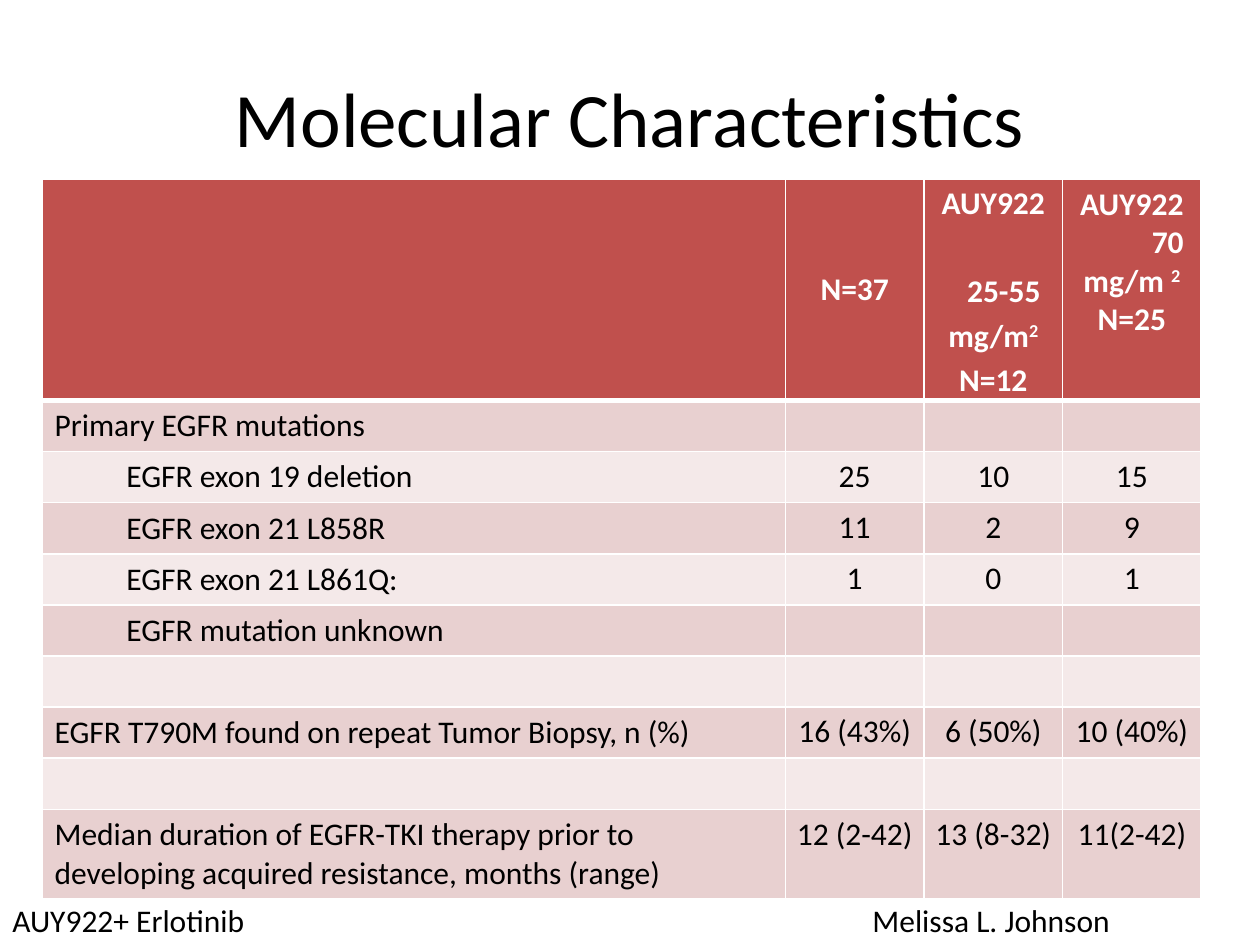
import pptx
import pptx.dml.color
import pptx.enum.text
import pptx.oxml
import pptx.oxml.ns
import pptx.util

Pt = pptx.util.Pt
RGBColor = pptx.dml.color.RGBColor
ALIGN = pptx.enum.text.PP_ALIGN
ANCHOR = pptx.enum.text.MSO_ANCHOR

COLORS = {"header": "C0504D", "odd": "E8D0D0", "even": "F4E9E9",
          "line": "FFFFFF", "light": "FFFFFF", "dark": "000000"}
NAMESPACE = pptx.oxml.ns.nsdecls("a")


def write(paragraph, text, size=18, color="dark", bold=False, indent=0, **formats):
    """Fill a paragraph; text after a caret is superscript."""
    if indent:
        paragraph._p.get_or_add_pPr().set("marL", str(Pt(indent)))
    for name, value in formats.items():
        setattr(paragraph, name, value)
    for position, part in enumerate(text.split("^")):
        run = paragraph.add_run()
        run.text = part
        for name, value in {"name": "Calibri", "size": Pt(size), "bold": bold}.items():
            setattr(run.font, name, value)
        run.font.color.rgb = RGBColor.from_string(COLORS[color])
        if position:
            run._r.get_or_add_rPr().set("baseline", "30000")


def style_cell(cell, fill, top=1, bottom=1):
    """Set the borders and then the fill of a table cell."""
    properties = cell._tc.get_or_add_tcPr()
    for side, width in {"L": 1, "R": 1, "T": top, "B": bottom}.items():
        properties.append(pptx.oxml.parse_xml(
            f'<a:ln{side} {NAMESPACE} w="{Pt(width)}"><a:solidFill>'
            f'<a:srgbClr val="{COLORS["line"]}"/></a:solidFill></a:ln{side}>'))
    cell.fill.solid()
    cell.fill.fore_color.rgb = RGBColor.from_string(COLORS[fill])


presentation = pptx.Presentation()
presentation.slide_width, presentation.slide_height = Pt(720), Pt(540)
slide = presentation.slides.add_slide(presentation.slide_layouts[6])

# Title
title = slide.shapes.add_textbox(Pt(36), Pt(21.6), Pt(648), Pt(90)).text_frame
title.word_wrap = True
title.vertical_anchor = ANCHOR.MIDDLE
write(title.paragraphs[0], "Molecular Characteristics", size=44, alignment=ALIGN.CENTER)

# Table: label, indent of the label, values
body_rows = [
    ("Primary EGFR mutations", 0, []),
    ("EGFR exon 19 deletion", 41, ["25", "10", "15"]),
    ("EGFR exon 21 L858R", 41, ["11", "2", "9"]),
    ("EGFR exon 21 L861Q:", 41, ["1", "0", "1"]),
    ("EGFR mutation unknown", 41, []),
    ("", 0, []),
    ("EGFR T790M found on repeat Tumor Biopsy, n (%)", 0,
     ["16 (43%)", "6 (50%)", "10 (40%)"]),
    ("", 0, []),
    ("Median duration of EGFR-TKI therapy prior to developing acquired resistance, "
     "months (range)", 0, ["12 (2-42)", "13 (8-32)", "11(2-42)"]),
]
column_widths = [424.8, 79.2, 79.2, 79.2]
row_heights = [126.5] + [29.2] * 8 + [51]
table = slide.shapes.add_table(len(row_heights), len(column_widths), Pt(24), Pt(102.4),
                               Pt(sum(column_widths)), Pt(sum(row_heights))).table
for column, width in zip(table.columns, column_widths):
    column.width = Pt(width)
for row, height in zip(table.rows, row_heights):
    row.height = Pt(height)

# Header row: lines of each cell as text, indent, space before; then line spacing
headers = [
    ([], 1),
    ([("N=37", 0, 0)], 1),
    ([("AUY922", 0, 0), ("25-55", 12, 25), ("mg/m^2", 0, 0), ("N=12", 0, 0)], 1.15),
    ([("AUY922", 0, 0), ("70", 41, 0), ("mg/m ^2", 0, 0), ("N=25", 0, 0)], 1),
]
for column_index, (lines, spacing) in enumerate(headers):
    cell = table.cell(0, column_index)
    style_cell(cell, "header", bottom=3)
    for line_index, (text, indent, gap) in enumerate(lines):
        frame = cell.text_frame
        paragraph = frame.add_paragraph() if line_index else frame.paragraphs[0]
        write(paragraph, text, color="light", bold=True, indent=indent,
              alignment=ALIGN.CENTER, line_spacing=spacing, space_before=Pt(gap))
table.cell(0, 1).vertical_anchor = ANCHOR.MIDDLE
tight_margins = {"margin_left": Pt(5), "margin_right": Pt(5),
                 "margin_top": Pt(0), "margin_bottom": Pt(0)}
for name, value in tight_margins.items():
    setattr(table.cell(0, 2), name, value)

for row_index, (label, indent, values) in enumerate(body_rows, start=1):
    for cell in table.rows[row_index].cells:
        style_cell(cell, "odd" if row_index % 2 else "even", top=3 if row_index == 1 else 1)
    if label:
        label_cell = table.cell(row_index, 0)
        write(label_cell.text_frame.paragraphs[0], label, indent=indent)
        if indent:
            label_cell.vertical_anchor = ANCHOR.MIDDLE
    for column_index, value in enumerate(values, start=1):
        cell = table.cell(row_index, column_index)
        for name, margin in tight_margins.items():
            setattr(cell, name, margin)
        write(cell.text_frame.paragraphs[0], value,
              alignment=ALIGN.CENTER, line_spacing=1.15)

# Footer: study on the left, presenter at a tab stop
footer = slide.shapes.add_textbox(Pt(0), Pt(511.2), Pt(720), Pt(28.8)).text_frame
footer.word_wrap = True
footer_line = footer.paragraphs[0]
footer_line._p.get_or_add_pPr().append(pptx.oxml.parse_xml(
    f'<a:tabLst {NAMESPACE}><a:tab pos="{Pt(491.5)}" algn="l"/></a:tabLst>'))
write(footer_line, "AUY922+ Erlotinib\tMelissa L. Johnson")

presentation.save("out.pptx")
